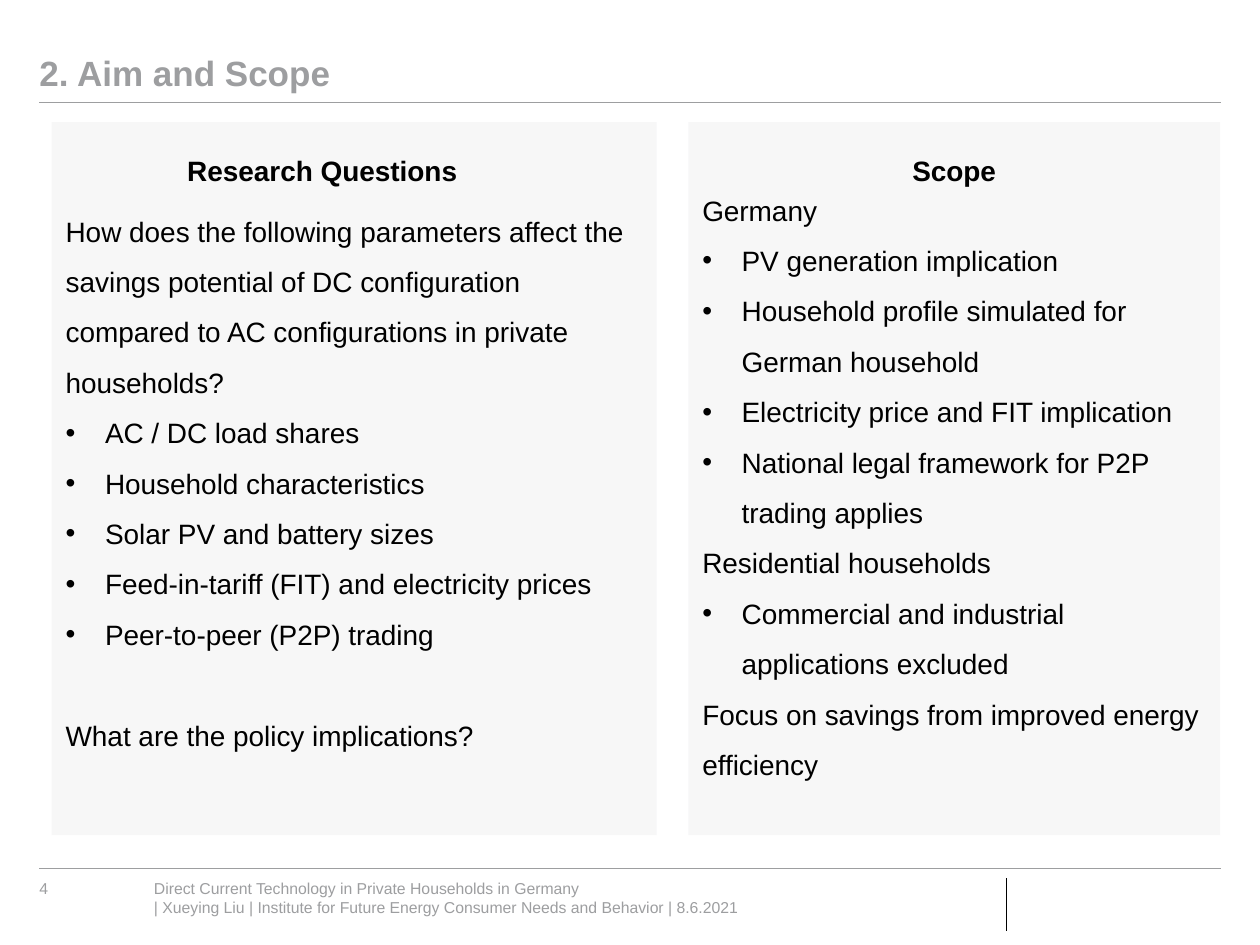
from dataclasses import dataclass

from lxml.etree import SubElement
from pptx import Presentation
from pptx.dml.color import RGBColor as RGB
from pptx.enum.shapes import MSO_CONNECTOR as Link
from pptx.enum.text import MSO_ANCHOR as Anchor, MSO_AUTO_SIZE as Fit, PP_ALIGN as Align
from pptx.oxml.ns import qn
from pptx.util import Pt


@dataclass(frozen=True)
class Theme:
    font: str = "Arial"
    gray: RGB = RGB(0x9D, 0x9E, 0xA0)
    panel: RGB = RGB(0xD8, 0xD8, 0xD9)
    black: RGB = RGB(0, 0, 0)
    title: int = 20
    body: int = 16
    small: int = 9
    pitch: float = 28.8  # distance between body lines
    hang: float = 22.5  # bullet indent


T = Theme()
LEFT, RIGHT = 22.5, 697.5
TOP, HIGH = 69.8, 407.5

# Each list entry: (has bullet, space before, text)
ASKS = [
    (False, 0, "How does the following parameters affect the savings potential of "
               "DC configuration compared to AC configurations in private households?"),
    (True, 0, "AC / DC load shares"),
    (True, 0, "Household characteristics"),
    (True, 0, "Solar PV and battery sizes"),
    (True, 0, "Feed-in-tariff (FIT) and electricity prices"),
    (True, 0, "Peer-to-peer (P2P) trading"),
    (False, T.pitch, "What are the policy implications?"),
]
SCOPE = [
    (False, 0, "Germany"),
    (True, 0, "PV generation implication"),
    (True, 0, "Household profile simulated for German household"),
    (True, 0, "Electricity price and FIT implication"),
    (True, 0, "National legal framework for P2P trading applies"),
    (False, 0, "Residential households"),
    (True, 0, "Commercial and industrial applications excluded"),
    (False, 0, "Focus on savings from improved energy efficiency"),
]


def place(shape, x, y, w, h):
    shape.left, shape.top, shape.width, shape.height = map(Pt, (x, y, w, h))


def setup(frame, anchor=Anchor.TOP, pad=(0, 0, 0, 0)):
    frame.word_wrap = True
    frame.auto_size = Fit.NONE
    frame.vertical_anchor = anchor
    (frame.margin_left, frame.margin_top,
     frame.margin_right, frame.margin_bottom) = map(Pt, pad)


def style(para, size, color, bold=False, align=Align.LEFT):
    para.alignment = align
    font = para.font
    font.name, font.size, font.bold = T.font, Pt(size), bold
    font.color.rgb = color


def mark(para, dot):
    """Give the paragraph a hanging bullet, or none."""
    props = para._p.get_or_add_pPr()
    props.set("marL", str(Pt(T.hang) if dot else 0))
    props.set("indent", str(-Pt(T.hang) if dot else 0))
    if dot:
        SubElement(props, qn("a:buFont"), typeface=T.font)
        SubElement(props, qn("a:buChar"), char="•")
    else:
        SubElement(props, qn("a:buNone"))


def head(slide, text):
    shape = slide.shapes.title
    place(shape, LEFT, 11.5, RIGHT - LEFT, 42.5)
    setup(shape.text_frame, Anchor.BOTTOM)
    para = shape.text_frame.paragraphs[0]
    para.text = text
    para.line_spacing = 0.9
    style(para, T.title, T.gray, bold=True)


def panel(shape, x, w, inset, items):
    """Fill a body placeholder with a tinted ground and a list."""
    place(shape, x, TOP, w, HIGH)
    shape.fill.solid()
    shape.fill.fore_color.rgb = T.panel
    tint = shape._element.spPr.find(".//" + qn("a:srgbClr"))
    SubElement(tint, qn("a:alpha"), val="20000")
    frame = shape.text_frame
    setup(frame, pad=(8, inset, 8, 0))
    for i, (dot, gap, text) in enumerate(items):
        para = frame.add_paragraph() if i else frame.paragraphs[0]
        para.text = text
        para.line_spacing = Pt(T.pitch)
        para.space_before = Pt(gap)
        para.space_after = Pt(0)
        mark(para, dot)
        style(para, T.body, T.black)


def label(slide, box, lines, size, color, bold=False, align=Align.LEFT):
    frame = slide.shapes.add_textbox(*map(Pt, box)).text_frame
    setup(frame)
    for i, text in enumerate(lines):
        para = frame.add_paragraph() if i else frame.paragraphs[0]
        para.text = text
        style(para, size, color, bold, align)


def rule(slide, x1, y1, x2, y2, color, width):
    line = slide.shapes.add_connector(Link.STRAIGHT, *map(Pt, (x1, y1, x2, y2)))
    line.line.color.rgb = color
    line.line.width = Pt(width)
    SubElement(line._element.spPr, qn("a:effectLst"))


def main():
    deck = Presentation()
    deck.slide_width, deck.slide_height = Pt(720), Pt(540)
    slide = deck.slides.add_slide(deck.slide_layouts[3])

    # Title and frame rules
    head(slide, "2. Aim and Scope")
    for y in (58.5, 496):
        rule(slide, LEFT, y, RIGHT, y, T.gray, 0.5)

    # Two panels with their headings
    panel(slide.placeholders[1], 29.5, 345.8, 43, ASKS)
    panel(slide.placeholders[2], 393.3, 303.9, 31, SCOPE)
    label(slide, (107, 87.5, 172, 20), ["Research Questions"],
          T.body, T.black, bold=True)
    label(slide, (459.3, 87.5, 172, 20), ["Scope"],
          T.body, T.black, bold=True, align=Align.CENTER)

    # Footer
    label(slide, (LEFT, 502, 52, 11), ["4"], T.small, T.gray)
    label(slide, (88, 502, 390, 34), [
        "Direct Current Technology in Private Households in Germany",
        "| Xueying Liu | Institute for Future Energy Consumer Needs and Behavior | 8.6.2021",
    ], T.small, T.gray)
    rule(slide, 575.3, 502, 575.3, 532, T.black, 0.75)

    deck.save("out.pptx")


if __name__ == "__main__":
    main()
